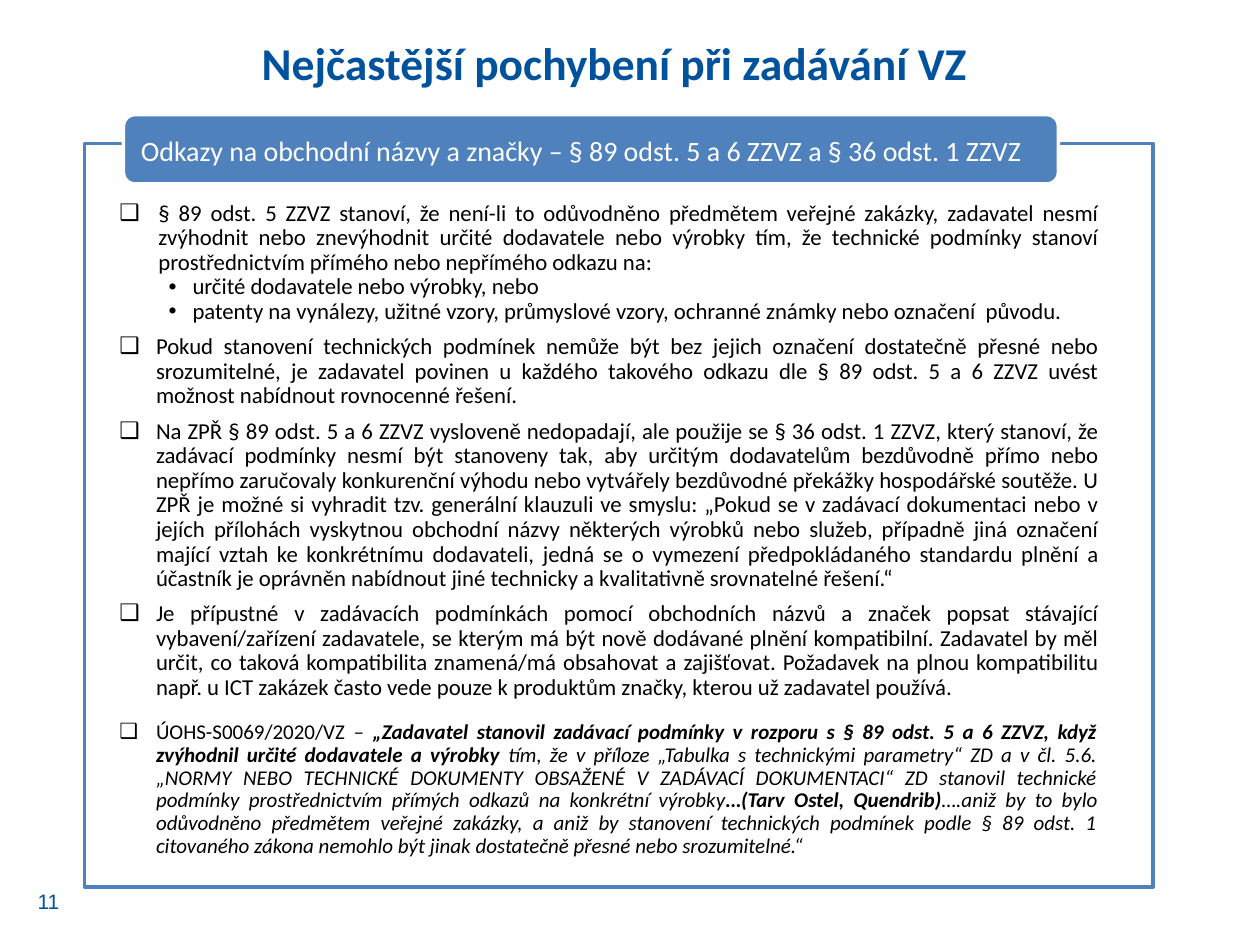
"""Build a slide on brand-name references in public procurement."""
from lxml import etree
from pptx import Presentation
from pptx import util as u
from pptx.dml.color import RGBColor
from pptx.enum import shapes, text
from pptx.oxml.ns import qn

BLUE, NAVY, WHITE, BLACK = "4F81BD", "00529C", "FFFFFF", "000000"
BOX, DOT = "❑", "•"
JUSTIFY = text.PP_ALIGN.JUSTIFY


def color(value):
    """Turn a hex string into a colour."""
    return RGBColor.from_string(value)


def add_runs(paragraph, content, size, fill, font="Calibri", bold=False, italic=False):
    """Add one formatted run to a paragraph."""
    run = paragraph.add_run()
    run.text = content
    run.font.name, run.font.size = font, u.Pt(size)
    run.font.bold, run.font.italic = bold, italic
    run.font.color.rgb = color(fill)


def set_bullet(paragraph, character, margin, hanging):
    """Give a paragraph a hanging bullet."""
    properties = paragraph._p.get_or_add_pPr()
    properties.set("marL", str(u.Inches(margin)))
    properties.set("indent", str(-u.Inches(hanging)))
    etree.SubElement(properties, qn("a:buFont")).set("typeface", "Arial")
    etree.SubElement(properties, qn("a:buChar")).set("char", character)


class SlideBuilder:
    """Hold the style and the current slide."""

    def __init__(self, slide):
        """Keep the slide to draw on."""
        self.slide = slide

    def panel(self, kind, box, fill, line, opacity=100):
        """Add an outlined and filled shape."""
        shape = self.slide.shapes.add_shape(kind, *map(u.Inches, box))
        shape.shadow.inherit = False
        shape.fill.solid()
        shape.fill.fore_color.rgb = color(fill)
        if opacity < 100:
            tint = shape.fill._xPr.find(".//" + qn("a:srgbClr"))
            etree.SubElement(tint, qn("a:alpha")).set("val", str(opacity * 1000))
        shape.line.color.rgb = color(line)
        shape.line.width = u.Pt(2)

    def frame(self, box, anchor=text.MSO_ANCHOR.TOP):
        """Add an empty wrapping text box and return its frame."""
        frame = self.slide.shapes.add_textbox(*map(u.Inches, box)).text_frame
        frame.word_wrap = True
        frame.vertical_anchor = anchor
        return frame

    def label(self, content, box, size, fill, align=text.PP_ALIGN.LEFT,
              anchor=text.MSO_ANCHOR.TOP, **style):
        """Add a one-paragraph text box."""
        paragraph = self.frame(box, anchor).paragraphs[0]
        paragraph.alignment = align
        add_runs(paragraph, content, size, fill, **style)

    def bullets(self, items, box):
        """Add a justified bullet list."""
        frame = self.frame(box)
        for index, item in enumerate(items):
            paragraph = frame.paragraphs[0] if index == 0 else frame.add_paragraph()
            character, margin, hanging, before, after, size, runs = item
            set_bullet(paragraph, character, margin, hanging)
            paragraph.alignment = JUSTIFY
            paragraph.line_spacing = 0.9
            paragraph.space_before, paragraph.space_after = u.Pt(before), u.Pt(after)
            paragraph.level = 1 if after else 0
            for content, bold, italic in runs:
                add_runs(paragraph, content, size, BLACK, bold=bold, italic=italic)


def plain(content):
    """Wrap text as a single plain run."""
    return [(content, False, False)]


RULING = [
    ("ÚOHS-S0069/2020/VZ", False, False),
    (" – ", False, True),
    ("„Zadavatel stanovil zadávací podmínky v rozporu s § 89 odst. 5 a 6 ZZVZ, když "
     "zvýhodnil určité dodavatele a výrobky ", True, True),
    ("tím, že v příloze „Tabulka s technickými parametry“ ZD a v čl. 5.6. „NORMY NEBO "
     "TECHNICKÉ DOKUMENTY OBSAŽENÉ V ZADÁVACÍ DOKUMENTACI“ ZD stanovil technické podmínky "
     "prostřednictvím přímých odkazů na konkrétní výrobky", False, True),
    ("…(Tarv Ostel, Quendrib)", True, True),
    ("….aniž by to bylo odůvodněno předmětem veřejné zakázky, a aniž by stanovení "
     "technických podmínek podle § 89 odst. 1 citovaného zákona nemohlo být jinak "
     "dostatečně přesné nebo srozumitelné.“", False, True),
]

ITEMS = [
    (BOX, 0.31, 0.31, 0, 0, 13, plain(
        "§ 89 odst. 5 ZZVZ stanoví, že není-li to odůvodněno předmětem veřejné zakázky, "
        "zadavatel nesmí zvýhodnit nebo znevýhodnit určité dodavatele nebo výrobky tím, že "
        "technické podmínky stanoví prostřednictvím přímého nebo nepřímého odkazu na:")),
    (DOT, 0.58, 0.19, 0, 0, 13, plain("určité dodavatele nebo výrobky, nebo")),
    (DOT, 0.58, 0.19, 0, 0, 13, plain(
        "patenty na vynálezy, užitné vzory, průmyslové vzory, ochranné známky nebo "
        "označení  původu.")),
    (BOX, 0.29, 0.29, 6, 0, 13, plain(
        "Pokud stanovení technických podmínek nemůže být bez jejich označení dostatečně "
        "přesné nebo srozumitelné, je zadavatel povinen u každého takového odkazu dle § 89 "
        "odst. 5 a 6 ZZVZ uvést možnost nabídnout rovnocenné řešení.")),
    (BOX, 0.29, 0.29, 6, 0, 13, plain(
        "Na ZPŘ § 89 odst. 5 a 6 ZZVZ vysloveně nedopadají, ale použije se § 36 odst. 1 ZZVZ, "
        "který stanoví, že zadávací podmínky nesmí být stanoveny tak, aby určitým dodavatelům "
        "bezdůvodně přímo nebo nepřímo zaručovaly konkurenční výhodu nebo vytvářely bezdůvodné "
        "překážky hospodářské soutěže. U ZPŘ je možné si vyhradit tzv. generální klauzuli ve "
        "smyslu: „Pokud se v zadávací dokumentaci nebo v jejích přílohách vyskytnou obchodní "
        "názvy některých výrobků nebo služeb, případně jiná označení mající vztah ke "
        "konkrétnímu dodavateli, jedná se o vymezení předpokládaného standardu plnění a "
        "účastník je oprávněn nabídnout jiné technicky a kvalitativně srovnatelné řešení.“")),
    (BOX, 0.29, 0.29, 6, 6, 13, plain(
        "Je přípustné v zadávacích podmínkách pomocí obchodních názvů a značek popsat "
        "stávající vybavení/zařízení zadavatele, se kterým má být nově dodávané plnění "
        "kompatibilní. Zadavatel by měl určit, co taková kompatibilita znamená/má obsahovat a "
        "zajišťovat. Požadavek na plnou kompatibilitu např. u ICT zakázek často vede pouze k "
        "produktům značky, kterou už zadavatel používá.")),
    (BOX, 0.29, 0.29, 6, 6, 12, RULING),
]


def main():
    """Build and save the presentation."""
    presentation = Presentation()
    presentation.slide_width, presentation.slide_height = u.Inches(10), u.Inches(7.5)
    builder = SlideBuilder(presentation.slides.add_slide(presentation.slide_layouts[6]))
    builder.label("11", (0.2, 6.95, 0.55, 0.4), 12, NAVY, font="Arial",
                  anchor=text.MSO_ANCHOR.MIDDLE)
    builder.panel(shapes.MSO_SHAPE.RECTANGLE, (0.67, 1.14, 8.48, 5.9), WHITE, BLUE, opacity=90)
    builder.panel(shapes.MSO_SHAPE.ROUNDED_RECTANGLE, (0.98, 0.91, 7.42, 0.55), BLUE, WHITE)
    builder.label("Odkazy na obchodní názvy a značky – § 89 odst. 5 a 6 ZZVZ a § 36 odst. 1 ZZVZ",
                  (1.02, 1.01, 8.25, 0.37), 16, WHITE)
    builder.bullets(ITEMS, (0.85, 1.55, 7.96, 5.9))
    builder.label("Nejčastější pochybení při zadávání VZ", (0.53, 0.23, 8.7, 0.57), 26, NAVY,
                  align=text.PP_ALIGN.CENTER, bold=True)
    presentation.save("out.pptx")


if __name__ == "__main__":
    main()
